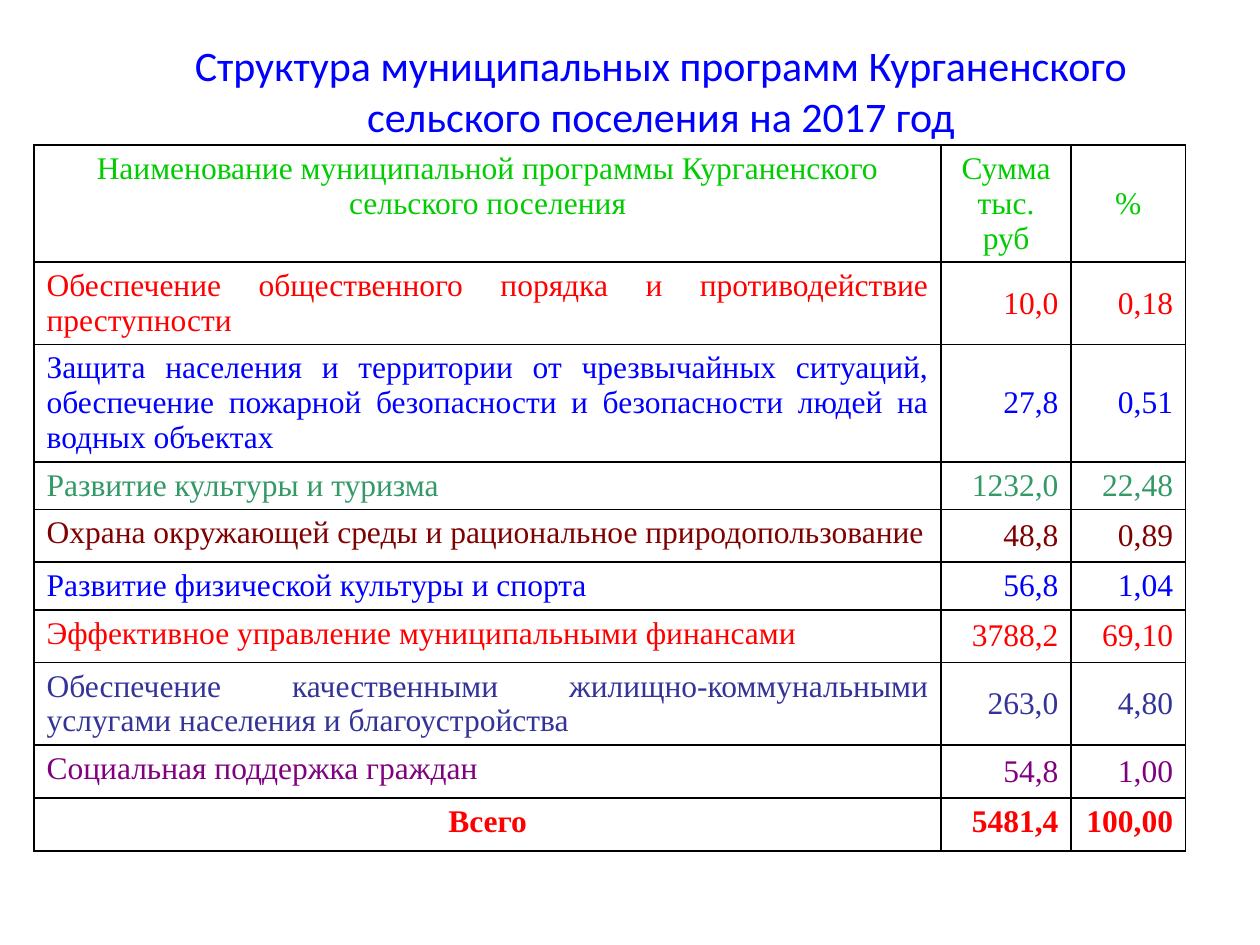
from dataclasses import dataclass

from lxml.etree import SubElement
from pptx import Presentation
from pptx.dml.color import RGBColor
from pptx.enum.text import MSO_ANCHOR as Anchor, MSO_AUTO_SIZE as AutoSize, PP_ALIGN as Align
from pptx.oxml.ns import qn
from pptx.util import Inches, Pt


@dataclass(frozen=True)
class Theme:
    title_font: str = "Calibri"
    table_font: str = "Times New Roman"
    title_size: int = 24
    table_size: int = 18
    border_width: int = 1
    black: str = "000000"
    white: str = "FFFFFF"
    blue: str = "0000FF"
    green: str = "00CC00"
    red: str = "FF0000"
    sea_green: str = "339966"
    maroon: str = "800000"
    indigo: str = "333399"
    purple: str = "800080"


THEME = Theme()
TITLE = "Структура муниципальных программ Курганенского сельского поселения на 2017 год"
HEADER = ("Наименование муниципальной программы Курганенского сельского поселения",
          "Сумма тыс. руб", "%")
TOTAL = ("Всего", "5481,4", "100,00")

# Name, sum, share, text colour, row height
PROGRAMS = [
    ("Обеспечение общественного порядка и противодействие преступности",
     "10,0", "0,18", THEME.red, 0.46),
    ("Защита населения и территории от чрезвычайных ситуаций, обеспечение пожарной "
     "безопасности и безопасности людей на водных объектах",
     "27,8", "0,51", THEME.blue, 0.63),
    ("Развитие культуры и туризма", "1232,0", "22,48", THEME.sea_green, 0.31),
    ("Охрана окружающей среды и рациональное природопользование",
     "48,8", "0,89", THEME.maroon, 0.42),
    ("Развитие физической культуры и спорта", "56,8", "1,04", THEME.blue, 0.2),
    ("Эффективное управление муниципальными финансами",
     "3788,2", "69,10", THEME.red, 0.42),
    ("Обеспечение качественными жилищно-коммунальными услугами населения и благоустройства",
     "263,0", "4,80", THEME.indigo, 0.58),
    ("Социальная поддержка граждан", "54,8", "1,00", THEME.purple, 0.42),
]
COLUMN_WIDTHS = (7.2, 1.03, 0.91)


def write_text(frame, text, *, font, size, color, align, bold=False):
    """Put one formatted paragraph into a text frame."""
    para = frame.paragraphs[0]
    para.alignment = align
    span = para.add_run()
    span.text = text
    span.font.name = font
    span.font.size = Pt(size)
    span.font.bold = bold
    span.font.color.rgb = RGBColor.from_string(color)


class SlideBuilder:
    def __init__(self, slide, theme):
        self.slide = slide
        self.theme = theme

    def title(self, text, left, top, width, height):
        box = self.slide.shapes.title
        box.left, box.top = Inches(left), Inches(top)
        box.width, box.height = Inches(width), Inches(height)
        frame = box.text_frame
        frame.word_wrap = True
        frame.auto_size = AutoSize.NONE
        frame.vertical_anchor = Anchor.MIDDLE
        write_text(frame, text, font=self.theme.title_font, size=self.theme.title_size,
                   color=self.theme.blue, align=Align.CENTER)

    def table(self, left, top, widths, heights):
        frame = self.slide.shapes.add_table(
            len(heights), len(widths), Inches(left), Inches(top),
            Inches(sum(widths)), Inches(sum(heights)))
        table = frame.table
        table.first_row = table.horz_banding = False
        for column, width in zip(table.columns, widths):
            column.width = Inches(width)
        for row, height in zip(table.rows, heights):
            row.height = Inches(height)
        return table

    def row(self, table, index, texts, color, aligns, anchors, bold=False):
        for cell, text, align, anchor in zip(table.rows[index].cells, texts, aligns, anchors):
            write_text(cell.text_frame, text, font=self.theme.table_font,
                       size=self.theme.table_size, color=color, align=align, bold=bold)
            cell.vertical_anchor = anchor
            self.borders(cell)
            cell.fill.solid()
            cell.fill.fore_color.rgb = RGBColor.from_string(self.theme.white)

    def borders(self, cell):
        properties = cell._tc.get_or_add_tcPr()
        for side in ("a:lnL", "a:lnR", "a:lnT", "a:lnB"):
            line = SubElement(properties, qn(side), w=str(Pt(self.theme.border_width)))
            fill = SubElement(line, qn("a:solidFill"))
            SubElement(fill, qn("a:srgbClr"), val=self.theme.black)


def main():
    deck = Presentation()
    deck.slide_width, deck.slide_height = Inches(10), Inches(7.5)
    page = SlideBuilder(deck.slides.add_slide(deck.slide_layouts[5]), THEME)

    # Title
    page.title(TITLE, 1, 0.28, 8.49, 0.87)

    # Table: header, programs, total
    heights = [0.72, *(program[-1] for program in PROGRAMS), 0.42]
    table = page.table(0.27, 1.15, COLUMN_WIDTHS, heights)
    middle_numbers = (Anchor.TOP, Anchor.MIDDLE, Anchor.MIDDLE)
    page.row(table, 0, HEADER, THEME.green, [Align.CENTER] * 3, middle_numbers)
    for index, (name, amount, share, color, _) in enumerate(PROGRAMS, start=1):
        page.row(table, index, (name, amount, share), color,
                 (Align.JUSTIFY, Align.RIGHT, Align.RIGHT), middle_numbers)
    page.row(table, len(heights) - 1, TOTAL, THEME.red,
             (Align.CENTER, Align.RIGHT, Align.RIGHT), [Anchor.TOP] * 3, bold=True)

    deck.save("out.pptx")


if __name__ == "__main__":
    main()
